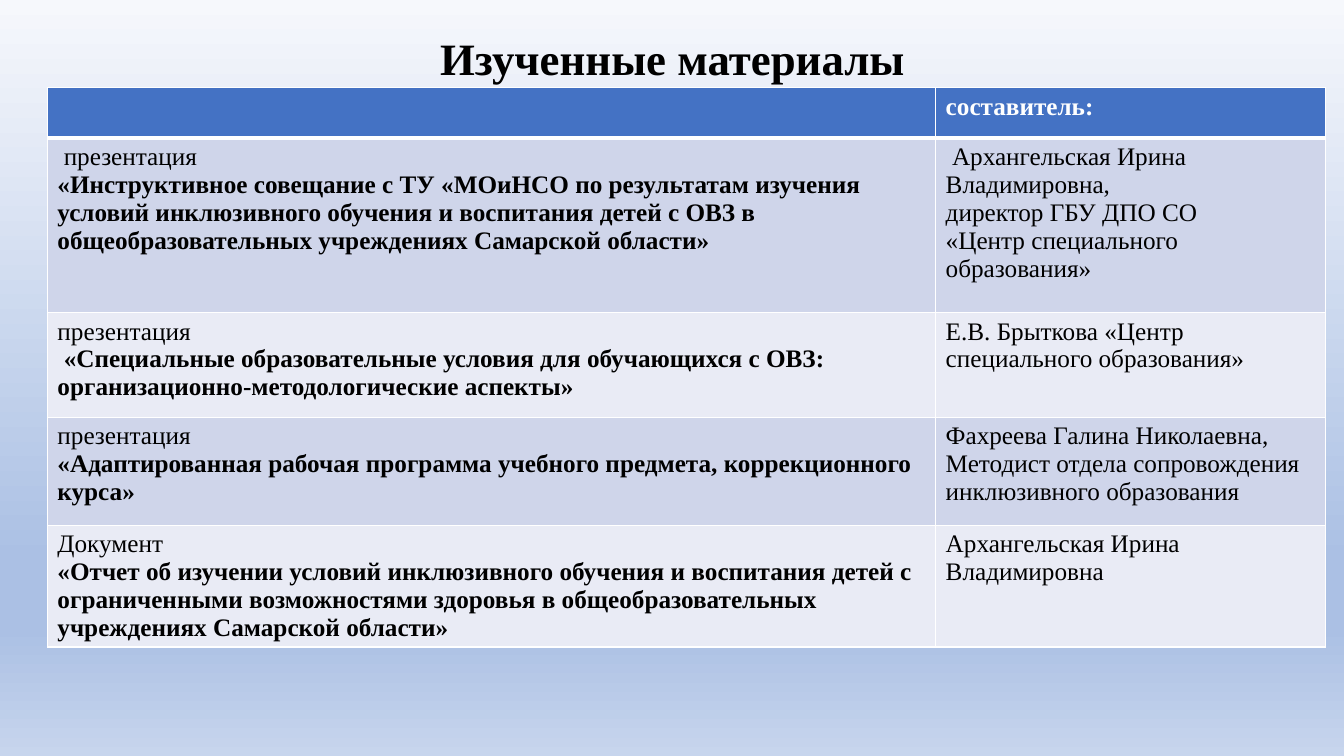
from copy import deepcopy

from lxml.etree import SubElement
from pptx import Presentation
from pptx.dml.color import RGBColor
from pptx.enum.text import MSO_ANCHOR, PP_ALIGN
from pptx.oxml.ns import qn
from pptx.util import Inches, Pt

FONT = "Times New Roman"
HEADER_FILL = "4472C4"
BAND_FILLS = ["CFD5EA", "E9EBF5"]
BACKGROUND_STOPS = [(0, "F6F8FC"), (74, "ABC0E4"), (83, "ABC0E4"), (100, "C7D5ED")]
COLUMN_WIDTHS = [8.81, 3.87]
ROW_HEIGHTS = [0.5, 1.73, 1.04, 1.07, 1.21]

# Each cell is a list of paragraphs, each paragraph a list of (text, bold) runs
HEADER = [[], [[("составитель:", True)]]]
MATERIALS = [
    [
        [[(" презентация", False)],
         [("«Инструктивное совещание с ТУ «МОиНСО по результатам изучения условий "
           "инклюзивного обучения и воспитания детей с ОВЗ в общеобразовательных "
           "учреждениях Самарской области»", True)]],
        [[(" Архангельская Ирина Владимировна,", False)],
         [("директор ГБУ ДПО СО", False)],
         [("«Центр специального образования»", False)]],
    ],
    [
        [[("презентация", False)],
         [(" ", False), ("«Специальные образовательные условия для обучающихся с ОВЗ:", True)],
         [("организационно-методологические аспекты»", True)]],
        [[("Е.В. Брыткова «Центр специального образования»", False)]],
    ],
    [
        [[("презентация", False)],
         [("«Адаптированная рабочая программа учебного предмета, "
           "коррекционного курса»", True)]],
        [[("Фахреева Галина Николаевна,", False)],
         [("Методист отдела сопровождения инклюзивного образования", False)]],
    ],
    [
        [[("Документ", False)],
         [("«Отчет об изучении условий инклюзивного обучения и воспитания детей с "
           "ограниченными возможностями здоровья в общеобразовательных учреждениях "
           "Самарской области»", True)]],
        [[("Архангельская Ирина Владимировна", False)]],
    ],
]


def color(hex_string):
    return RGBColor.from_string(hex_string)


def add_text(paragraph, text, size=18, bold=False, font_color="000000"):
    run = paragraph.add_run()
    run.text = text
    run.font.name = FONT
    run.font.size = Pt(size)
    run.font.bold = bold
    run.font.color.rgb = color(font_color)


def set_background(slide):
    fill = slide.background.fill
    fill.gradient()
    fill.gradient_angle = 270
    # Extend the default two stops to the full list
    stop_list = fill.gradient_stops[0]._gs.getparent()
    while len(stop_list) < len(BACKGROUND_STOPS):
        stop_list.append(deepcopy(stop_list[0]))
    for stop, (percent, hex_string) in zip(fill.gradient_stops, BACKGROUND_STOPS):
        stop.position = percent / 100
        stop.color.rgb = color(hex_string)


def add_title(slide, left, top, width, height):
    title = slide.shapes.title
    title.left, title.top = Inches(left), Inches(top)
    title.width, title.height = Inches(width), Inches(height)
    title.text_frame.vertical_anchor = MSO_ANCHOR.MIDDLE
    title.text_frame.word_wrap = True
    paragraph = title.text_frame.paragraphs[0]
    paragraph.alignment = PP_ALIGN.CENTER
    paragraph.line_spacing = 0.9
    add_text(paragraph, "Изученные материалы", size=32, bold=True)


def set_borders(cell, widths):
    properties = cell._tc.get_or_add_tcPr()
    for index, (side, width) in enumerate(widths.items()):
        line = SubElement(properties, qn(f"a:ln{side}"), w=str(Pt(width)))
        solid = SubElement(line, qn("a:solidFill"))
        SubElement(solid, qn("a:srgbClr"), val="FFFFFF")
        # Border lines come before the cell fill
        properties.insert(index, line)


def fill_cell(cell, paragraphs, fill, font_color, top_border, bottom_border):
    cell.fill.solid()
    cell.fill.fore_color.rgb = color(fill)
    set_borders(cell, {"L": 1, "R": 1, "T": top_border, "B": bottom_border})
    text_frame = cell.text_frame
    text_frame.paragraphs[0].font.size = Pt(18)
    for index, runs in enumerate(paragraphs):
        paragraph = text_frame.add_paragraph() if index else text_frame.paragraphs[0]
        for text, bold in runs:
            add_text(paragraph, text, bold=bold, font_color=font_color)


def add_materials_table(slide, left, top):
    rows = [HEADER] + MATERIALS
    table = slide.shapes.add_table(
        len(rows), len(COLUMN_WIDTHS), Inches(left), Inches(top),
        Inches(sum(COLUMN_WIDTHS)), Inches(sum(ROW_HEIGHTS))).table
    for column, width in zip(table.columns, COLUMN_WIDTHS):
        column.width = Inches(width)
    for row, height in zip(table.rows, ROW_HEIGHTS):
        row.height = Inches(height)
    for row_index, row in enumerate(rows):
        is_header = row_index == 0
        for column_index, paragraphs in enumerate(row):
            fill_cell(
                table.cell(row_index, column_index), paragraphs,
                fill=HEADER_FILL if is_header else BAND_FILLS[(row_index - 1) % 2],
                font_color="FFFFFF" if is_header else "000000",
                top_border=3 if row_index == 1 else 1,
                bottom_border=3 if is_header else 1)


def main():
    presentation = Presentation()
    presentation.slide_width = Inches(13.33)
    presentation.slide_height = Inches(7.5)
    slide = presentation.slides.add_slide(presentation.slide_layouts[5])
    set_background(slide)
    add_title(slide, 0.92, 0.35, 11.5, 0.52)
    add_materials_table(slide, 0.47, 0.87)
    presentation.save("out.pptx")


if __name__ == "__main__":
    main()
